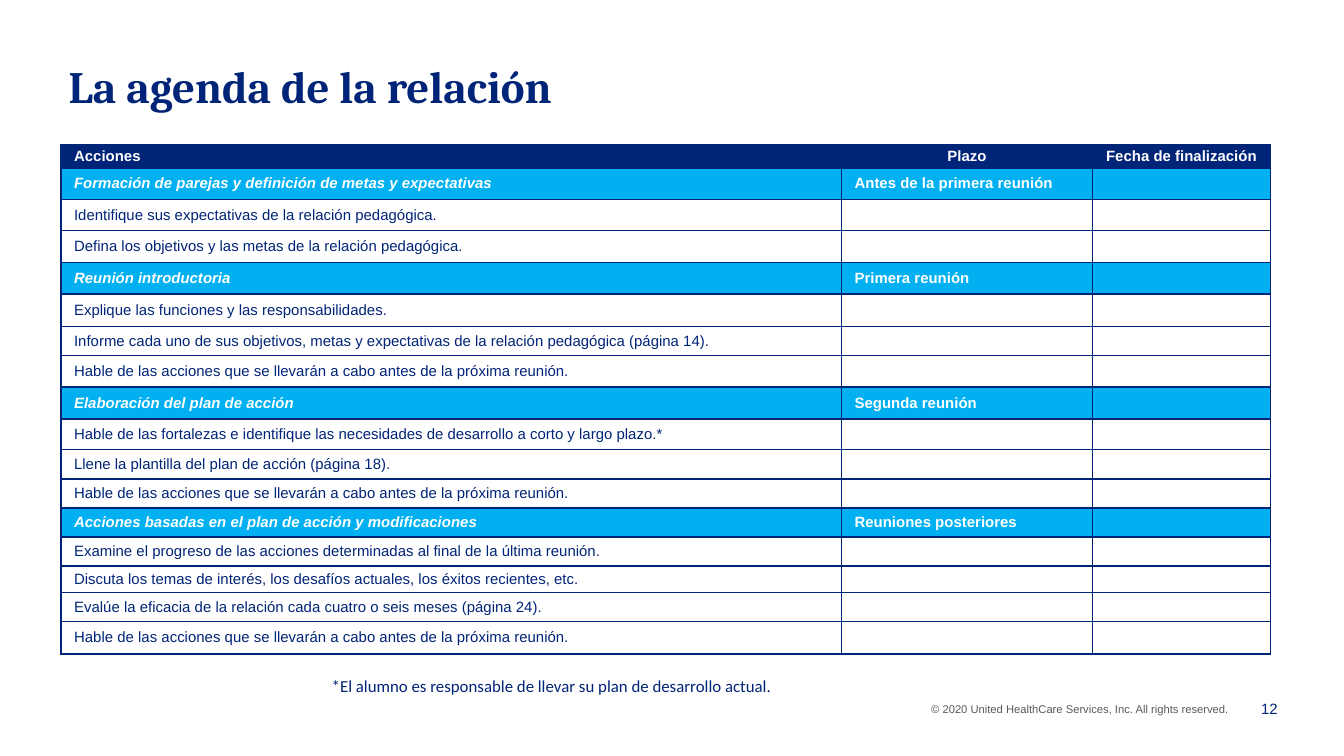
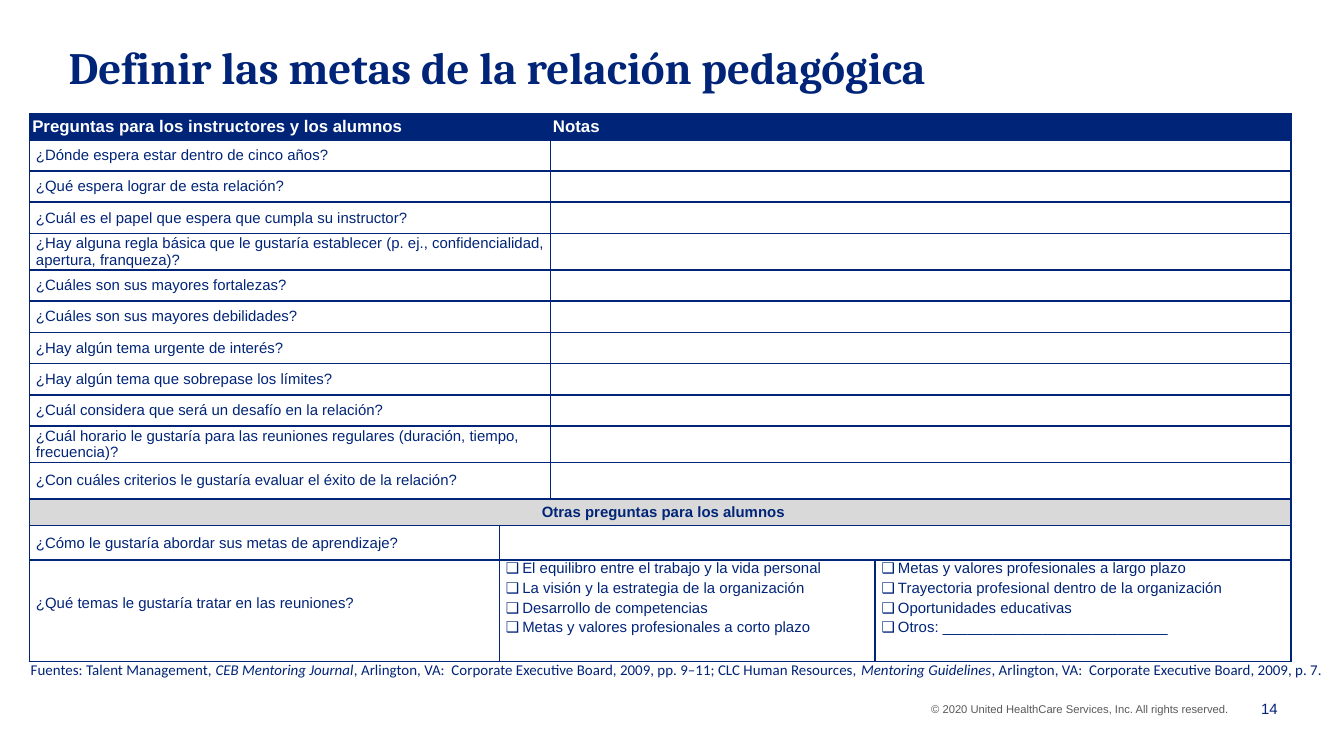
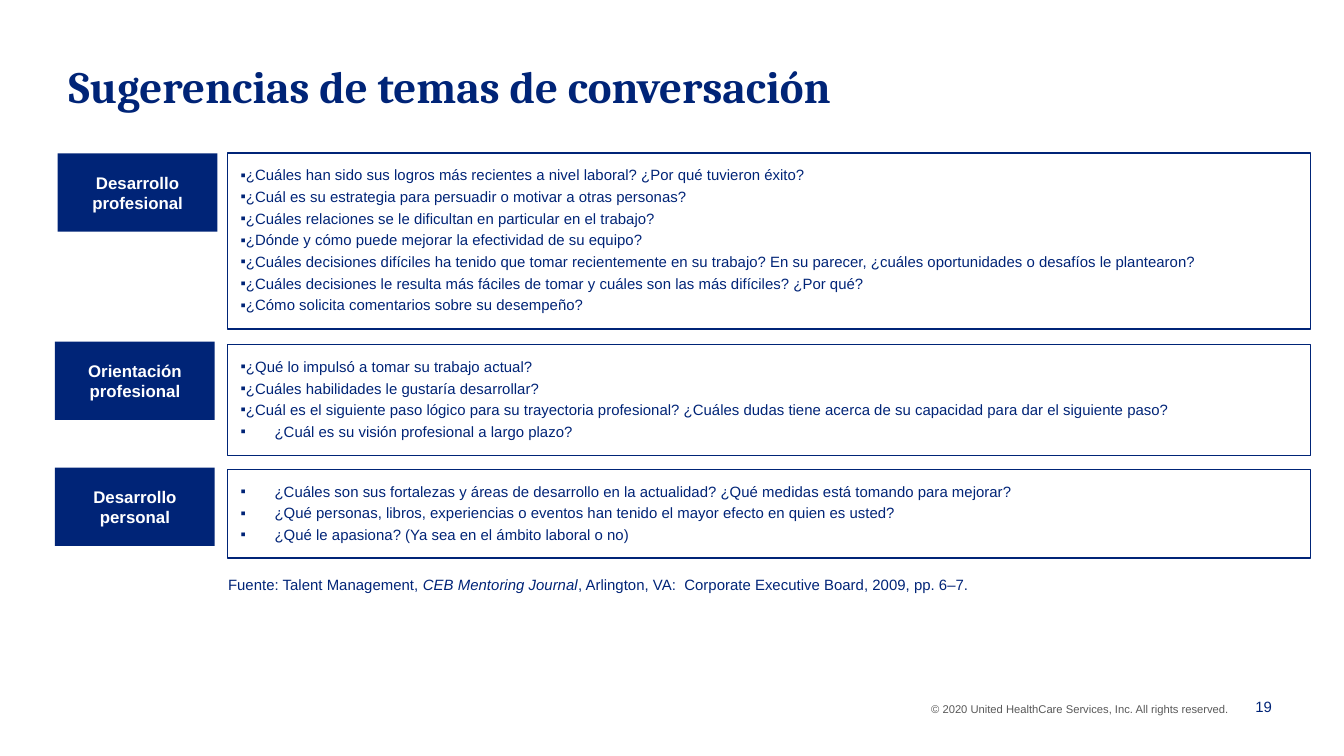
from dataclasses import dataclass
from lxml.etree import SubElement
from pptx import Presentation
from pptx.dml.color import RGBColor
from pptx.enum.shapes import MSO_SHAPE
from pptx.enum.text import MSO_ANCHOR, PP_ALIGN
from pptx.oxml.ns import qn
from pptx.util import Cm, Pt


@dataclass(frozen=True)
class Theme:
    navy: str = "002477"
    sky: str = "00B0F0"
    gray: str = "D9D9D9"
    slate: str = "595959"
    white: str = "FFFFFF"
    serif: str = "Cambria"
    sans: str = "Arial"
    soft: str = "Calibri"
    title: int = 24
    head: int = 9
    body: int = 8
    fine: int = 6


T = Theme()


def look(size=T.body, color=T.navy, name=T.sans, bold=False, italic=False):
    return dict(size=Pt(size), color=color, name=name, bold=bold, italic=italic)


BODY = look()
HEAD = look(T.head, T.white, bold=True)
BAND = look(color=T.white, bold=True)
LEAD = look(color=T.white, bold=True, italic=True)
PAD = (0.25, 0, 0.25, 0)
WIDE = (0.25, 0.13, 0.25, 0.13)
FULL = (0.25, 0.25, 0.25, 0.25)
SIDES = ("left", "top", "right", "bottom")
NEXT = "Hable de las acciones que se llevarán a cabo antes de la próxima reunión."
BOARD = ", Arlington, VA:  Corporate Executive Board, 2009, "
BOOK = "CEB Mentoring Journal"

PLAN = (
    ("Formación de parejas y definición de metas y expectativas", "Antes de la primera reunión", (
        "Identifique sus expectativas de la relación pedagógica.",
        "Defina los objetivos y las metas de la relación pedagógica.")),
    ("Reunión introductoria", "Primera reunión", (
        "Explique las funciones y las responsabilidades.",
        "Informe cada uno de sus objetivos, metas y expectativas de la relación pedagógica (página 14).",
        NEXT)),
    ("Elaboración del plan de acción", "Segunda reunión", (
        "Hable de las fortalezas e identifique las necesidades de desarrollo a corto y largo plazo.*",
        "Llene la plantilla del plan de acción (página 18).",
        NEXT)),
    ("Acciones basadas en el plan de acción y modificaciones", "Reuniones posteriores", (
        "Examine el progreso de las acciones determinadas al final de la última reunión.",
        "Discuta los temas de interés, los desafíos actuales, los éxitos recientes, etc.",
        "Evalúe la eficacia de la relación cada cuatro o seis meses (página 24).",
        NEXT)),
)
PLAN_ROWS = (0.43, 0.6, 0.59, 0.6, 0.6, 0.61, 0.55, 0.6, 0.6, 0.58, 0.55, 0.55, 0.55, 0.55, 0.5, 0.55, 0.61)

ASKS = (
    "¿Dónde espera estar dentro de cinco años?",
    "¿Qué espera lograr de esta relación?",
    "¿Cuál es el papel que espera que cumpla su instructor?",
    "¿Hay alguna regla básica que le gustaría establecer (p. ej., confidencialidad, apertura, franqueza)?",
    "¿Cuáles son sus mayores fortalezas?",
    "¿Cuáles son sus mayores debilidades?",
    "¿Hay algún tema urgente de interés?",
    "¿Hay algún tema que sobrepase los límites?",
    "¿Cuál considera que será un desafío en la relación?",
    "¿Cuál horario le gustaría para las reuniones regulares (duración, tiempo, frecuencia)?",
    "¿Con cuáles criterios le gustaría evaluar el éxito de la relación?",
)
ASK_ROWS = (0.48, *[0.59] * 3, 0.69, *[0.59] * 5, 0.69, 0.69, 0.5, 0.66, 1.91)
CHECKS = (
    (1, ("El equilibro entre el trabajo y la vida personal",
         "La visión y la estrategia de la organización",
         "Desarrollo de competencias",
         "Metas y valores profesionales a corto plazo")),
    (3, ("Metas y valores profesionales a largo plazo",
         "Trayectoria profesional dentro de la organización",
         "Oportunidades educativas",
         "Otros: " + "_" * 27)),
)

TOPICS = (
    ("Desarrollo profesional", (1.09, 2.9), (2.89, 3.33), 0.79, 0, (
        "¿Cuáles han sido sus logros más recientes a nivel laboral? ¿Por qué tuvieron éxito?",
        "¿Cuál es su estrategia para persuadir o motivar a otras personas?",
        "¿Cuáles relaciones se le dificultan en particular en el trabajo?",
        "¿Dónde y cómo puede mejorar la efectividad de su equipo?",
        "¿Cuáles decisiones difíciles ha tenido que tomar recientemente en su trabajo? "
        "En su parecer, ¿cuáles oportunidades o desafíos le plantearon?",
        "¿Cuáles decisiones le resulta más fáciles de tomar y cuáles son las más difíciles? ¿Por qué?",
        "¿Cómo solicita comentarios sobre su desempeño?")),
    ("Orientación profesional", (1.04, 6.46), (6.51, 2.1), 0.64, 1, (
        "¿Qué lo impulsó a tomar su trabajo actual?",
        "¿Cuáles habilidades le gustaría desarrollar?",
        "¿Cuál es el siguiente paso lógico para su trayectoria profesional? "
        "¿Cuáles dudas tiene acerca de su capacidad para dar el siguiente paso?",
        "¿Cuál es su visión profesional a largo plazo?")),
    ("Desarrollo personal", (1.04, 8.84), (8.87, 1.68), 0.64, 3, (
        "¿Cuáles son sus fortalezas y áreas de desarrollo en la actualidad? "
        "¿Qué medidas está tomando para mejorar?",
        "¿Qué personas, libros, experiencias o eventos han tenido el mayor efecto en quien es usted?",
        "¿Qué le apasiona? (Ya sea en el ámbito laboral o no)")),
)


def tint(color):
    return RGBColor.from_string(color)


def style(font, form):
    for key, value in form.items():
        if key == "color":
            font.color.rgb = tint(value)
        else:
            setattr(font, key, value)


def hang(para, left, first, mark=None):
    props = para._p.get_or_add_pPr()
    props.set("marL", str(Cm(left)))
    props.set("indent", str(Cm(first)))
    if mark:
        SubElement(props, qn("a:buFont"), typeface=T.sans)
        SubElement(props, qn("a:buChar"), char=mark)


def write(frame, lines, form, align=PP_ALIGN.LEFT, gap=0):
    paras = []
    for line in lines:
        para = frame.add_paragraph() if paras else frame.paragraphs[0]
        para.alignment = align
        if paras:
            para.space_before = Pt(gap)
        parts = (line,) if isinstance(line, str) else line
        for place, part in enumerate(parts):
            run = para.add_run()
            run.text = part
            style(run.font, form)
            if place % 2:
                run.font.italic = True
        paras.append(para)
    return paras


def inset(thing, pads):
    for side, pad in zip(SIDES, pads):
        setattr(thing, "margin_" + side, Cm(pad))


def label(slide, spot, line, form, pads=WIDE, align=PP_ALIGN.LEFT, anchor=MSO_ANCHOR.TOP):
    frame = slide.shapes.add_textbox(*map(Cm, spot)).text_frame
    frame.word_wrap = True
    frame.vertical_anchor = anchor
    inset(frame, pads)
    return write(frame, [line], form, align)[0]


def block(slide, spot, pads, anchor, fill=None, line=None):
    shape = slide.shapes.add_shape(MSO_SHAPE.RECTANGLE, *map(Cm, spot))
    shape.shadow.inherit = False
    if fill:
        shape.fill.solid()
        shape.fill.fore_color.rgb = tint(fill)
    else:
        shape.fill.background()
    if line:
        shape.line.color.rgb = tint(line)
        shape.line.width = Pt(0.75)
    else:
        shape.line.fill.background()
    frame = shape.text_frame
    frame.word_wrap = True
    frame.vertical_anchor = anchor
    inset(frame, pads)
    return frame


def edge(cell):
    props = cell._tc.get_or_add_tcPr()
    for side in "LRTB":
        line = SubElement(props, qn("a:ln" + side), w=str(Pt(1)))
        fill = SubElement(line, qn("a:solidFill"))
        SubElement(fill, qn("a:srgbClr"), val=T.navy)


def grid(slide, left, top, cols, rows, pads):
    size = map(Cm, (left, top, sum(cols), sum(rows)))
    table = slide.shapes.add_table(len(rows), len(cols), *size).table
    table.first_row = table.horz_banding = False
    for col, width in zip(table.columns, cols):
        col.width = Cm(width)
    for row, height in zip(table.rows, rows):
        row.height = Cm(height)
    for cell in table.iter_cells():
        edge(cell)
        cell.fill.background()
        cell.vertical_anchor = MSO_ANCHOR.MIDDLE
        inset(cell, pads)
        SubElement(cell.text_frame.paragraphs[0]._p, qn("a:endParaRPr"), sz=str(T.body * 100))
    return table


def paint(cells, color):
    for cell in cells:
        cell.fill.solid()
        cell.fill.fore_color.rgb = tint(color)


def start(deck, title, page, top=0.98, width=20.17, spot=(23.41, 13)):
    slide = deck.slides.add_slide(deck.slide_layouts[6])
    label(slide, (17.35, 13.15, 6.55, 0.51),
          "© 2020 United HealthCare Services, Inc. All rights reserved.", look(T.fine, T.slate))
    label(slide, (1.05, top, width, 1.52), title, look(T.title, name=T.serif, bold=True))
    label(slide, (*spot, 0.99, 0.79), page, BODY, align=PP_ALIGN.RIGHT, anchor=MSO_ANCHOR.MIDDLE)
    return slide


def agenda(deck):
    slide = start(deck, "La agenda de la relación", "12")
    table = grid(slide, 1.15, 2.74, (14.75, 4.75, 3.36), PLAN_ROWS, PAD)
    heads = ("Acciones", "Plazo", "Fecha de finalización")
    for place, head in enumerate(heads):
        cell = table.cell(0, place)
        if place:
            inset(cell, (0.2, 0, 0.2, 0))
        align = PP_ALIGN.CENTER if place else PP_ALIGN.LEFT
        write(cell.text_frame, [head], BAND, align)
    paint(table.rows[0].cells, T.navy)
    row = 1
    for name, time, acts in PLAN:
        write(table.cell(row, 0).text_frame, [name], LEAD)
        write(table.cell(row, 1).text_frame, [time], BAND)
        paint(table.rows[row].cells, T.sky)
        for step, act in enumerate(acts, row + 1):
            write(table.cell(step, 0).text_frame, [act], BODY)
        row += len(acts) + 1
    note = label(slide, (6.02, 12.78, 21.16, 0.38),
                 "*El alumno es responsable de llevar su plan de desarrollo actual.",
                 look(T.head, name=T.soft), PAD)
    hang(note, 0.33, -0.33)


def goals(deck):
    slide = start(deck, "Definir las metas de la relación pedagógica", "14", 0.63, 23.09)
    table = grid(slide, 0.56, 2.16, (8.88, 0.96, 6.14, 7.86), ASK_ROWS, (0.12, 0, 0, 0))
    band = len(ASKS) + 1
    spans = [(row, *pair) for row in range(band) for pair in ((0, 1), (2, 3))]
    spans += [(band, 0, 3), (band + 1, 1, 3), (band + 2, 1, 2)]
    for row, first, last in spans:
        table.cell(row, first).merge(table.cell(row, last))
    for col, head in ((0, "Preguntas para los instructores y los alumnos"), (2, "Notas")):
        inset(table.cell(0, col), [0.05] * 4)
        write(table.cell(0, col).text_frame, [head], HEAD)
    paint(table.rows[0].cells, T.navy)
    for row, ask in enumerate(ASKS, 1):
        write(table.cell(row, 0).text_frame, [ask], BODY)
    write(table.cell(band, 0).text_frame, ["Otras preguntas para los alumnos"],
          look(bold=True), PP_ALIGN.CENTER)
    paint(table.rows[band].cells, T.gray)
    more = ("¿Cómo le gustaría abordar sus metas de aprendizaje?",
            "¿Qué temas le gustaría tratar en las reuniones?")
    for row, ask in enumerate(more, band + 1):
        write(table.cell(row, 0).text_frame, [ask], BODY)
    table.cell(band + 2, 0).margin_bottom = Cm(0.3)
    for col, items in CHECKS:
        cell = table.cell(band + 2, col)
        cell.vertical_anchor = MSO_ANCHOR.TOP
        for para in write(cell.text_frame, items, BODY, gap=1.5):
            hang(para, 0.31, -0.31, "❑")
    label(slide, (0.33, 12.49, 25.07, 0.33),
          ("Fuentes: Talent Management, ", BOOK, BOARD + "pp. 9–11; CLC Human Resources, ",
           "Mentoring Guidelines", BOARD + "p. 7."), look(name=T.soft), PAD)


def topics(deck):
    slide = start(deck, "Sugerencias de temas de conversación", "19", spot=(23.3, 12.96))
    label(slide, (4.06, 10.88, 15.98, 0.33),
          ("Fuente: Talent Management, ", BOOK, BOARD + "pp. 6–7."), BODY, PAD)
    for name, spot, (top, height), step, deep, asks in TOPICS:
        frame = block(slide, (4.3, top, 20.47, height), FULL, MSO_ANCHOR.TOP, line=T.navy)
        paras = write(frame, asks, BODY, gap=2)
        flat = len(asks) - deep
        for place, para in enumerate(paras):
            hang(para, 0 if place < flat else step, -step, "▪")
        frame = block(slide, (*spot, 3.02, 1.48), PAD, MSO_ANCHOR.MIDDLE, fill=T.navy)
        write(frame, [name], HEAD, PP_ALIGN.CENTER)


def main():
    deck = Presentation()
    deck.slide_width, deck.slide_height = Cm(25.4), Cm(14.29)
    for build in (agenda, goals, topics):
        build(deck)
    deck.save("out.pptx")


if __name__ == "__main__":
    main()
